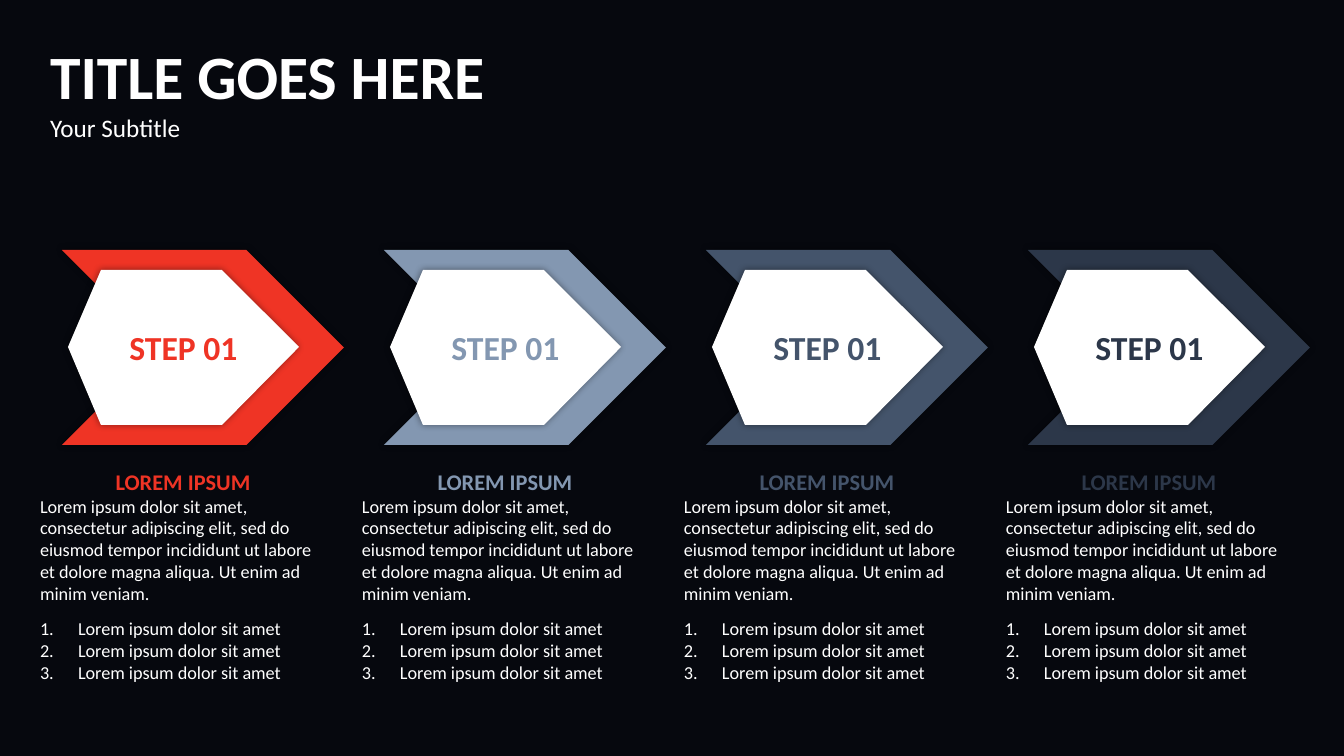
from lxml import etree
from pptx import Presentation
from pptx import util as u
from pptx.dml.color import RGBColor
from pptx.enum import shapes, text
from pptx.oxml.ns import qn

BACKDROP = RGBColor(0x22, 0x2A, 0x49)
BLACK = RGBColor(0x00, 0x00, 0x00)
WHITE = RGBColor(0xFF, 0xFF, 0xFF)
RED = RGBColor(0xEF, 0x34, 0x25)
STEEL = RGBColor(0x83, 0x97, 0xB1)
SLATE = RGBColor(0x44, 0x54, 0x6B)
NAVY = RGBColor(0x2C, 0x37, 0x49)

HEADING = ("TITLE GOES HERE", "Your Subtitle")
SUMMARY = (
    "Lorem ipsum dolor sit amet, consectetur adipiscing elit, sed do eiusmod "
    "tempor incididunt ut labore et dolore magna aliqua. Ut enim ad minim veniam."
)
POINTS = ["Lorem ipsum dolor sit amet"] * 3
STEPS = [
    ("STEP 01", "LOREM IPSUM", RED),
    ("STEP 01", "LOREM IPSUM", STEEL),
    ("STEP 01", "LOREM IPSUM", SLATE),
    ("STEP 01", "LOREM IPSUM", NAVY),
]

FONT = "Calibri"
PITCH = 322
SLIDE_BOX = (0, 0, 1344, 756)
HEADING_BOX = (40, 33, 655, 115)
ARROW_BOX = (62, 250, 282, 195)
DETAIL_BOX = (33, 465, 300, 224)
BADGE = [(101, 425), (222, 425), (299, 347), (222, 270), (101, 270), (68, 347)]
NUMBER_INDENT = 38


def px(length):
    return u.Emu(round(length * 914400 / 100.8))


def place(holder, box, shift=0):
    left, top, width, height = box
    holder.left, holder.top = px(left + shift), px(top)
    holder.width, holder.height = px(width), px(height)
    frame = holder.text_frame
    frame.word_wrap = True
    frame.auto_size = text.MSO_AUTO_SIZE.NONE
    frame.vertical_anchor = text.MSO_ANCHOR.TOP
    return frame


def style(paragraph, size, color, bold=False, align=text.PP_ALIGN.LEFT):
    paragraph.alignment = align
    paragraph.space_before = u.Pt(0)
    for run in paragraph.runs:
        run.font.name = FONT
        run.font.size = u.Pt(size)
        run.font.bold = bold
        run.font.color.rgb = color


def set_bullet(paragraph, numbered):
    props = paragraph._p.get_or_add_pPr()
    indent = px(NUMBER_INDENT) if numbered else 0
    props.set("marL", str(indent))
    props.set("indent", str(-indent))
    if numbered:
        etree.SubElement(props, qn("a:buFont"), typeface=FONT)
        etree.SubElement(props, qn("a:buAutoNum"), type="arabicPeriod")
    else:
        etree.SubElement(props, qn("a:buNone"))


def paint(shape, color):
    shape.fill.solid()
    shape.fill.fore_color.rgb = color
    shape.line.fill.background()
    shape.shadow.inherit = False


def add_glow(shape):
    effects = shape._element.spPr.find(qn("a:effectLst"))
    glow = etree.SubElement(effects, qn("a:outerShdw"), blurRad=str(u.Pt(5)),
                            dist="0", dir="0", algn="ctr", rotWithShape="0")
    black = etree.SubElement(glow, qn("a:srgbClr"), val=str(BLACK))
    etree.SubElement(black, qn("a:alpha"), val="40000")


def add_veil(slide):
    veil = slide.shapes.add_shape(shapes.MSO_SHAPE.RECTANGLE, *map(px, SLIDE_BOX))
    paint(veil, BLACK)
    tint = veil._element.spPr.find(qn("a:solidFill"))[0]
    etree.SubElement(tint, qn("a:alpha"), val="80000")
    slide.shapes._spTree.insert(2, veil._element)


def add_arrow(slide, shift, color):
    left, top, width, height = ARROW_BOX
    arrow = slide.shapes.add_shape(shapes.MSO_SHAPE.CHEVRON, px(left + shift),
                                   px(top), px(width), px(height))
    paint(arrow, color)
    add_glow(arrow)


def add_badge(slide, shift, label, color):
    corners = [(px(x + shift), px(y)) for x, y in BADGE]
    outline = slide.shapes.build_freeform(*corners[0])
    outline.add_line_segments(corners[1:], close=True)
    badge = outline.convert_to_shape()
    paint(badge, WHITE)
    add_glow(badge)
    badge.text_frame.text = label
    badge.text_frame.vertical_anchor = text.MSO_ANCHOR.MIDDLE
    style(badge.text_frame.paragraphs[0], 24, color, True, text.PP_ALIGN.CENTER)


def fill_details(holder, shift, caption, color):
    frame = place(holder, DETAIL_BOX, shift)
    frame.margin_left = frame.margin_right = px(7)
    frame.margin_top = frame.margin_bottom = px(3)
    frame.text = "\n".join([caption, SUMMARY, *POINTS])
    head, summary, *points = frame.paragraphs
    for paragraph in (head, summary):
        set_bullet(paragraph, False)
    for paragraph in points:
        set_bullet(paragraph, True)
    style(head, 16, color, True, text.PP_ALIGN.CENTER)
    for paragraph in (summary, *points):
        style(paragraph, 13, WHITE)
    points[0].space_before = u.Pt(9.7)


def main():
    deck = Presentation()
    deck.slide_width, deck.slide_height = map(px, SLIDE_BOX[2:])
    slide = deck.slides.add_slide(deck.slide_layouts.get_by_name("Comparison"))
    slide.background.fill.solid()
    slide.background.fill.fore_color.rgb = BACKDROP

    heading, *details = slide.placeholders
    add_veil(slide)
    frame = place(heading, HEADING_BOX)
    frame.text = "\n".join(HEADING)
    title, subtitle = frame.paragraphs
    style(title, 44, WHITE, True)
    style(subtitle, 18, WHITE)

    for column, (label, caption, color) in enumerate(STEPS):
        shift = column * PITCH
        add_arrow(slide, shift, color)
        add_badge(slide, shift, label, color)
        fill_details(details[column], shift, caption, color)

    deck.save("out.pptx")


if __name__ == "__main__":
    main()
